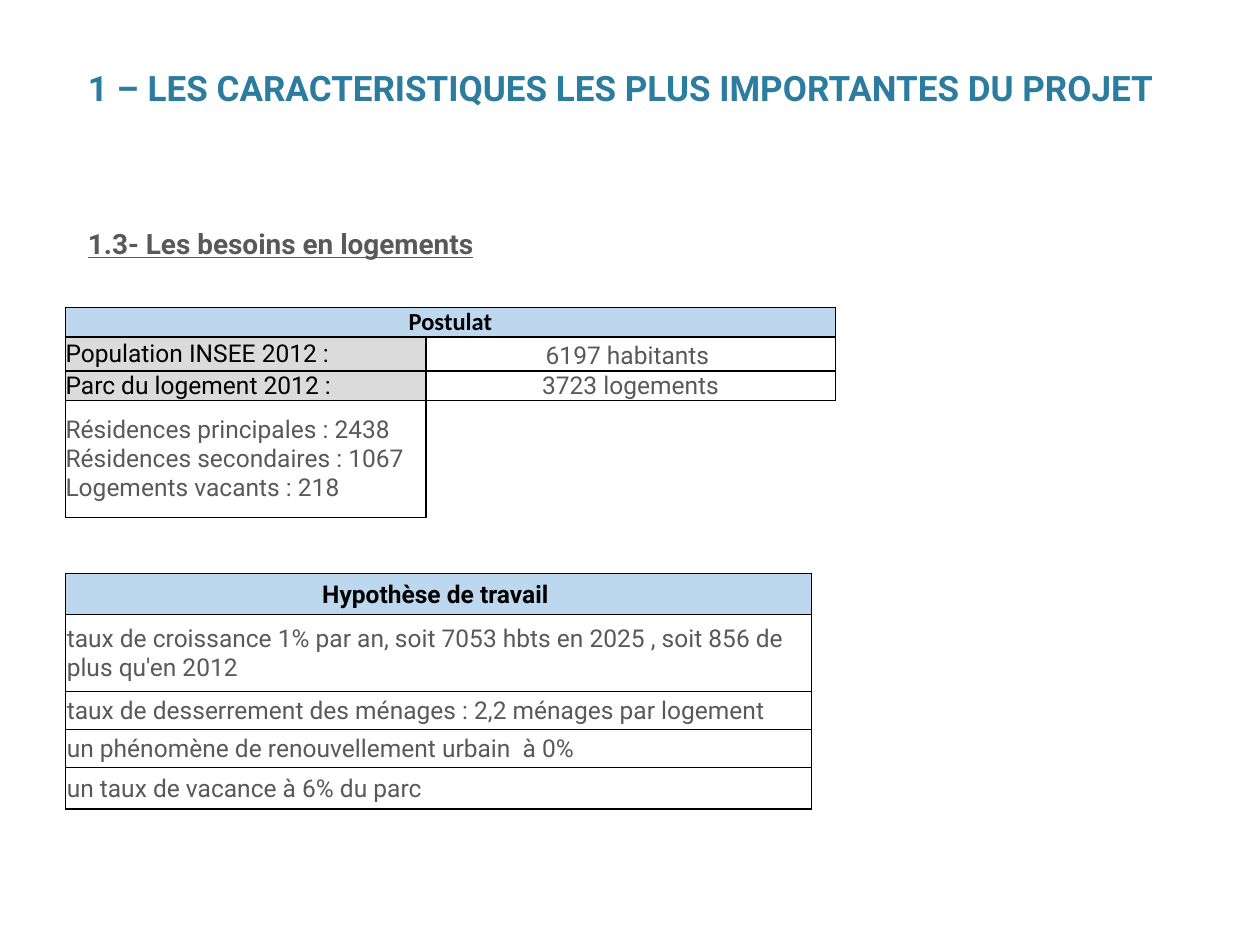
from dataclasses import dataclass

from lxml import etree
from pptx import Presentation
from pptx import util as u
from pptx.dml.color import RGBColor
from pptx.enum import text
from pptx.oxml import ns

BLACK = RGBColor(0x00, 0x00, 0x00)
GREY = RGBColor(0x59, 0x59, 0x59)
TEAL = RGBColor(0x2C, 0x7C, 0x9F)
SKY = RGBColor(0xBD, 0xD7, 0xEE)
SILVER = RGBColor(0xDB, 0xDB, 0xDB)
WHITE = RGBColor(0xFF, 0xFF, 0xFF)

SLIDE_WIDTH, SLIDE_HEIGHT = u.Inches(10), u.Inches(7.5)
GRID_COLUMNS, GRID_ROWS = 1000, 750
MIDDLE, BOTTOM = text.MSO_ANCHOR.MIDDLE, text.MSO_ANCHOR.BOTTOM
LEFT, CENTER = text.PP_ALIGN.LEFT, text.PP_ALIGN.CENTER


@dataclass(frozen=True)
class Style:
    size: float = 14
    color: RGBColor = GREY
    bold: bool = False
    underline: bool = False
    font: str = "Roboto"


@dataclass(frozen=True)
class Heading:
    content: str
    top: int
    height: int
    style: Style
    anchor: text.MSO_ANCHOR
    bottom_inset: int = 5


@dataclass(frozen=True)
class Entry:
    row: int
    column: int
    lines: tuple[str, ...] = ()
    style: Style = Style()
    fill: RGBColor | None = WHITE
    align: text.PP_ALIGN = LEFT
    anchor: text.MSO_ANCHOR = MIDDLE
    span: int = 1
    borders: tuple[float, float, float, float] = (1, 1, 1, 1)


@dataclass(frozen=True)
class Grid:
    top: int
    columns: tuple[int, ...]
    rows: tuple[int, ...]
    entries: tuple[Entry, ...]
    inset: int = 0


TABLE_LEFT = 52
HEADER = Style(color=BLACK, bold=True)
LABEL = Style(color=BLACK)
INNER = (1, 0.5, 1, 0.5)

HEADINGS = (
    Heading("1 – LES CARACTERISTIQUES LES PLUS IMPORTANTES DU PROJET", 12, 146,
            Style(20, TEAL, bold=True), BOTTOM, bottom_inset=72),
    Heading("1.3- Les besoins en logements", 175, 475,
            Style(16, bold=True, underline=True), text.MSO_ANCHOR.TOP),
)

POSTULATE = Grid(244, (286, 138, 187), (23, 27, 23, 93), (
    Entry(0, 0, ("Postulat",), Style(color=BLACK, bold=True, font="Calibri"),
          SKY, CENTER, BOTTOM, span=3),
    Entry(1, 0, ("Population INSEE 2012 :",), LABEL, SILVER),
    Entry(1, 1, ("6197 habitants ",), fill=None, align=CENTER, anchor=BOTTOM, span=2),
    Entry(2, 0, ("Parc du logement 2012 :",), LABEL, SILVER),
    Entry(2, 1, ("3723 logements",), fill=None, align=CENTER, anchor=BOTTOM, span=2,
          borders=(1, 1, 0.5, 0.5)),
    Entry(3, 0, ("Résidences principales : 2438", "Résidences secondaires : 1067",
                 "Logements vacants : 218")),
    Entry(3, 1, borders=(1, 0.5, 0, 0)),
    Entry(3, 2, borders=(0, 0.5, 0, 0)),
))

HYPOTHESIS = Grid(455, (592,), (33, 61, 30, 30, 33), (
    Entry(0, 0, ("Hypothèse de travail ",), HEADER, SKY, CENTER, borders=(1, 1, 1, 0.5)),
    Entry(1, 0, ("taux de croissance 1% par an, soit 7053 hbts en 2025 , "
                 "soit 856 de plus qu'en 2012",), borders=INNER),
    Entry(2, 0, ("taux de desserrement des ménages : 2,2 ménages par logement",), borders=INNER),
    Entry(3, 0, ("un phénomène de renouvellement urbain  à 0%",), borders=INNER),
    Entry(4, 0, ("un taux de vacance à 6% du parc",), borders=(1, 0.5, 1, 1)),
), inset=1)


def across(columns: float) -> int:
    return int(SLIDE_WIDTH * columns / GRID_COLUMNS)


def down(rows: float) -> int:
    return int(SLIDE_HEIGHT * rows / GRID_ROWS)


def write(paragraph, lines: tuple[str, ...], style: Style) -> None:
    for index, line in enumerate(lines):
        if index:
            paragraph.add_line_break()
        run = paragraph.add_run()
        run.text = line
        run.font.name = style.font
        run.font.size = u.Pt(style.size)
        run.font.bold = style.bold
        run.font.underline = style.underline
        run.font.color.rgb = style.color


def draw_heading(slide, heading: Heading) -> None:
    shape = slide.shapes.add_textbox(across(60), down(heading.top),
                                     across(880), down(heading.height))
    frame = shape.text_frame
    frame.word_wrap = True
    frame.vertical_anchor = heading.anchor
    frame.margin_bottom = down(heading.bottom_inset)
    write(frame.paragraphs[0], (heading.content,), heading.style)


def set_borders(cell, widths: tuple[float, float, float, float]) -> None:
    properties = cell._tc.get_or_add_tcPr()
    for index, (side, width) in enumerate(zip("LTRB", widths)):
        line = etree.Element(ns.qn(f"a:ln{side}"), w=str(u.Pt(width)))
        if width:
            fill = etree.SubElement(line, ns.qn("a:solidFill"))
            etree.SubElement(fill, ns.qn("a:srgbClr"), val=str(BLACK))
        else:
            etree.SubElement(line, ns.qn("a:noFill"))
        properties.insert(index, line)


def fill_entry(table, entry: Entry, inset: int) -> None:
    last = entry.column + entry.span - 1
    for column in range(entry.column, last + 1):
        cell = table.cell(entry.row, column)
        cell.margin_left = cell.margin_right = across(inset)
        cell.margin_top, cell.margin_bottom = down(inset), 0
        cell.vertical_anchor = entry.anchor
        if entry.fill is None:
            cell.fill.background()
        else:
            cell.fill.solid()
            cell.fill.fore_color.rgb = entry.fill
        set_borders(cell, entry.borders)
    origin = table.cell(entry.row, entry.column)
    if entry.span > 1:
        origin.merge(table.cell(entry.row, last))
    paragraph = origin.text_frame.paragraphs[0]
    paragraph.alignment = entry.align
    write(paragraph, entry.lines, entry.style)


def draw_table(slide, grid: Grid) -> None:
    shape = slide.shapes.add_table(len(grid.rows), len(grid.columns),
                                   across(TABLE_LEFT), down(grid.top),
                                   across(sum(grid.columns)), down(sum(grid.rows)))
    table = shape.table
    table.first_row = table.horz_banding = False
    for column, width in zip(table.columns, grid.columns):
        column.width = across(width)
    for row, height in zip(table.rows, grid.rows):
        row.height = down(height)
    for entry in grid.entries:
        fill_entry(table, entry, grid.inset)


def main() -> None:
    presentation = Presentation()
    presentation.slide_width, presentation.slide_height = SLIDE_WIDTH, SLIDE_HEIGHT
    slide = presentation.slides.add_slide(presentation.slide_layouts[6])
    for heading in HEADINGS:
        draw_heading(slide, heading)
    for grid in (POSTULATE, HYPOTHESIS):
        draw_table(slide, grid)
    presentation.save("out.pptx")


if __name__ == "__main__":
    main()
